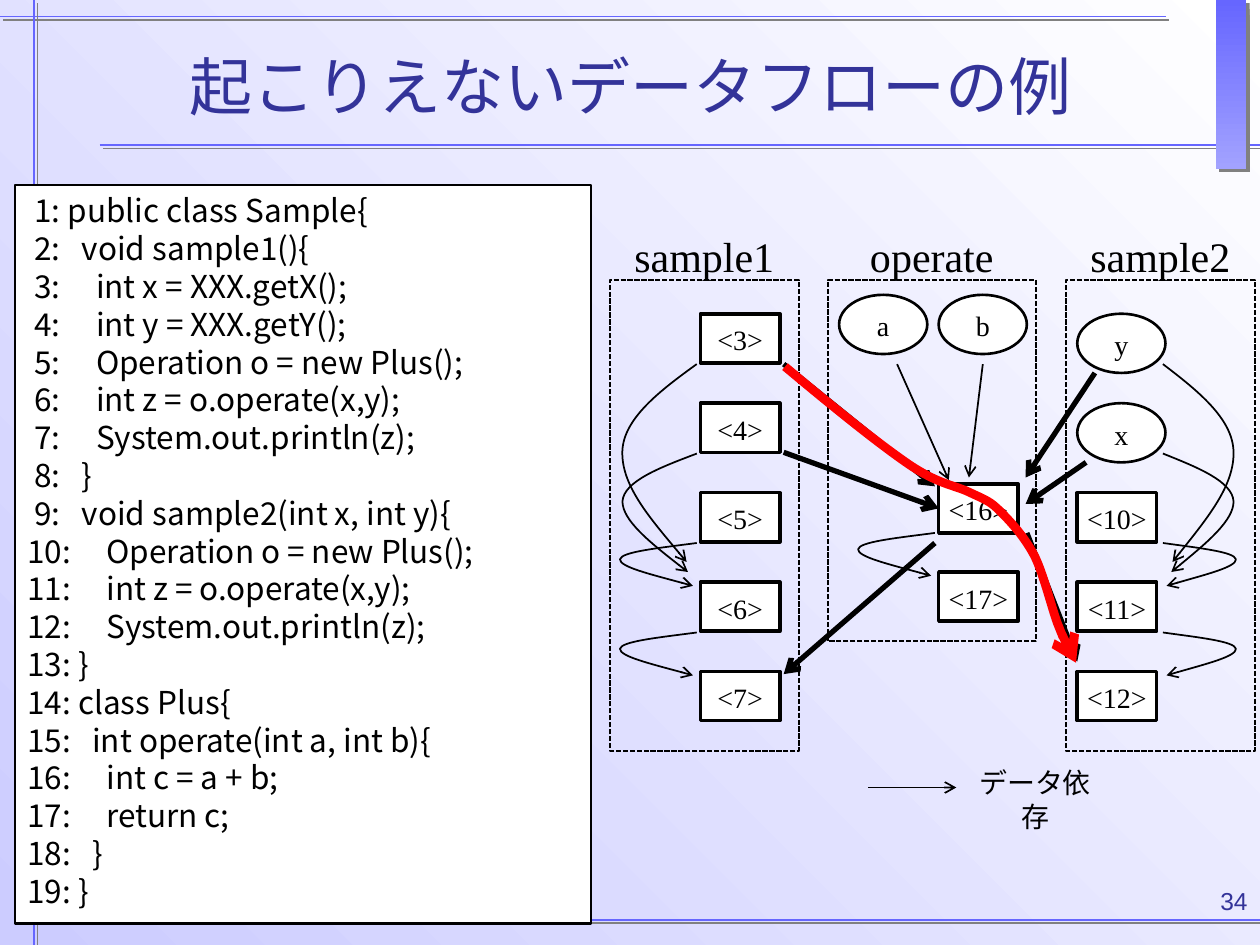
from lxml import etree
from pptx import Presentation
from pptx.dml.color import RGBColor
from pptx.enum import dml, shapes, text
from pptx.oxml.ns import qn
from pptx.util import Inches, Pt

NAVY = RGBColor(0x33, 0x33, 0x99)
BLUE = RGBColor(0x66, 0x66, 0xFF)
SOFT_BLUE = RGBColor(0xA2, 0xA2, 0xFF)
LAVENDER = RGBColor(0xCC, 0xCC, 0xFF)
GRAY = RGBColor(0x80, 0x80, 0x80)
WHITE = RGBColor(0xFF, 0xFF, 0xFF)
BLACK = RGBColor(0, 0, 0)
RED = RGBColor(0xFF, 0, 0)

SERIF = "Times New Roman"
RECT, OVAL = shapes.MSO_SHAPE.RECTANGLE, shapes.MSO_SHAPE.OVAL
CENTER, LEFT, RIGHT = text.PP_ALIGN.CENTER, text.PP_ALIGN.LEFT, text.PP_ALIGN.RIGHT
ROW_PITCH = 0.71

# Data flow curves as offsets from their start: one point, then Bezier triples
SHORT_FLOW = [(0, 0), (-0.3, 0.04), (-0.6, 0.07), (-0.61, 0.13),
              (-0.61, 0.19), (-0.32, 0.26), (-0.03, 0.34)]
MIDDLE_FLOW = [(0, 0), (-0.29, 0.11), (-0.58, 0.22), (-0.59, 0.38),
               (-0.59, 0.53), (-0.33, 0.74), (-0.07, 0.94)]
LONG_FLOW = [(0, 0), (-0.29, 0.21), (-0.58, 0.43), (-0.59, 0.69),
             (-0.6, 0.96), (-0.34, 1.26), (-0.08, 1.57)]
IMPOSSIBLE_FLOW = [
    (6.23, 2.91), (6.6, 3.22), (6.97, 3.52), (7.22, 3.69), (7.46, 3.85),
    (7.58, 3.85), (7.7, 3.91), (7.83, 3.97), (7.86, 3.98), (7.94, 4.06),
    (8.03, 4.15), (8.13, 4.26), (8.21, 4.41), (8.28, 4.55), (8.34, 4.8),
    (8.39, 4.94), (8.45, 5.09), (8.49, 5.18), (8.54, 5.26)]

CODE = """ 1: public class Sample{
 2:   void sample1(){
 3:     int x = XXX.getX();
 4:     int y = XXX.getY();
 5:     Operation o = new Plus();
 6:     int z = o.operate(x,y);
 7:     System.out.println(z);
 8:   }
 9:   void sample2(int x, int y){
10:     Operation o = new Plus();
11:     int z = o.operate(x,y);
12:     System.out.println(z);
13: }
14: class Plus{
15:   int operate(int a, int b){
16:     int c = a + b;
17:     return c;
18:   }
19: }"""


def set_format(target, values):
    for name, value in values.items():
        setattr(target, name, value)


def set_effects(part, shadow=False):
    effects = etree.SubElement(part._element.spPr, qn("a:effectLst"))
    if shadow:
        outer = etree.SubElement(effects, qn("a:outerShdw"), dist=str(Pt(2.8)),
                                 dir="2700000", algn="ctr", rotWithShape="0")
        etree.SubElement(outer, qn("a:srgbClr"), val=str(GRAY))


def set_line(part, color, width, dash=None, arrow=False):
    part.line.color.rgb = color
    part.line.width = Pt(width)
    if dash:
        part.line.dash_style = dash
    if arrow:
        etree.SubElement(part.line._get_or_add_ln(), qn("a:tailEnd"), type="arrow")


def set_gradient(fill, colors, angle):
    fill.gradient()
    fill.gradient_angle = angle
    for stop, color, position in zip(fill.gradient_stops, colors, (0, 1)):
        set_format(stop, {"position": position})
        stop.color.rgb = color


def write(frame, words, size, font=SERIF, color=BLACK, align=CENTER, **frame_values):
    frame.text = words
    set_format(frame, {"word_wrap": True, **frame_values})
    for paragraph in frame.paragraphs:
        paragraph.alignment = align
        set_format(paragraph.font, {"size": Pt(size), "name": font})
        paragraph.font.color.rgb = color


def add_label(slide, box, words, size, **style):
    label = slide.shapes.add_textbox(*map(Inches, box))
    write(label.text_frame, words, size, **style)


def add_box(slide, box, width, kind=RECT, fill=WHITE, dash=None):
    part = slide.shapes.add_shape(kind, *map(Inches, box))
    if fill is None:
        part.fill.background()
    else:
        part.fill.solid()
        part.fill.fore_color.rgb = fill
    set_line(part, BLACK, width, dash)
    set_effects(part)
    return part


def add_node(slide, x, y, words):
    """A statement such as <3> is a rectangle, a parameter is an ellipse."""
    if words.startswith("<"):
        node = add_box(slide, (x, y, 0.63, 0.39), 2)
    else:
        node = add_box(slide, (x, y, 0.7, 0.47), 1.5, OVAL)
    write(node.text_frame, words, 16, vertical_anchor=text.MSO_ANCHOR.MIDDLE,
          margin_left=0, margin_right=0, margin_top=Inches(0.02), margin_bottom=0)
    return node


def add_straight(slide, start, end, color=BLACK, width=1, arrow=True, shadow=False):
    line = slide.shapes.add_connector(shapes.MSO_CONNECTOR.STRAIGHT,
                                      *map(Inches, (*start, *end)))
    set_line(line, color, width, arrow=arrow)
    set_effects(line, shadow)
    return line


def add_curve(slide, points, x=0, y=0, stretch=1, color=BLACK, width=1):
    placed = [(Inches(x + dx * stretch), Inches(y + dy)) for dx, dy in points]
    builder = slide.shapes.build_freeform(*placed[0])
    builder.add_line_segments(placed[1:], close=False)
    curve = builder.convert_to_shape()
    # Turn each three line segments into one Bezier segment
    segments = list(curve._element.iter(qn("a:lnTo")))
    outline = segments[0].getparent()
    for first in range(0, len(segments), 3):
        bezier = etree.SubElement(outline, qn("a:cubicBezTo"))
        for segment in segments[first:first + 3]:
            bezier.append(segment[0])
            outline.remove(segment)
    curve.fill.background()
    set_line(curve, color, width, arrow=True)
    set_effects(curve)


def add_decoration(slide, width, height):
    set_gradient(slide.background.fill, (LAVENDER, WHITE), 45)
    for start, end in (((0, 0.13), (9.25, 0.13)), ((0.79, 1.15), (10.04, 1.15)),
                       ((0.75, 7.3), (width, 7.3)), ((0.27, 0), (0.27, height))):
        add_straight(slide, start, end, BLUE, arrow=False, shadow=True)
    ribbon = slide.shapes.add_shape(RECT, *map(Inches, (9.65, 0, 0.24, 1.34)))
    set_gradient(ribbon.fill, (BLUE, SOFT_BLUE), 270)
    ribbon.line.fill.background()
    set_effects(ribbon, shadow=True)


def add_title(slide, box):
    title = slide.shapes.title
    set_format(title, dict(zip(("left", "top", "width", "height"), map(Inches, box))))
    write(title.text_frame, "起こりえないデータフローの例", 36, "Arial", NAVY,
          vertical_anchor=text.MSO_ANCHOR.MIDDLE)


def add_code(slide, box):
    panel = add_box(slide, box, 1.5)
    write(panel.text_frame, CODE, 18, "Noto Sans CJK JP", align=LEFT,
          vertical_anchor=text.MSO_ANCHOR.TOP)
    for code_line in panel.text_frame.paragraphs:
        code_line.line_spacing = Pt(21.6)


def add_method(slide, box, name):
    left, top, width, _ = box
    add_box(slide, box, 1, fill=None, dash=dml.MSO_LINE.SQUARE_DOT)
    add_label(slide, (left, top - 0.44, width, 0.5), name, 24)


def add_sample(slide, box, name, nodes, node_x, flow_x, stretch):
    add_method(slide, box, name)
    left, top = box[:2]
    rows = [top + 0.27 + row * ROW_PITCH for row in range(len(nodes))]
    for y, words in zip(rows, nodes):
        add_node(slide, left + node_x, y, words)
    for y, flow in zip(rows, (LONG_FLOW, MIDDLE_FLOW, SHORT_FLOW, SHORT_FLOW)):
        add_curve(slide, flow, left + flow_x, y + 0.4, stretch)


def add_operate(slide, box):
    add_method(slide, box, "operate")
    left, top = box[:2]
    for x, y, words in ((0.09, 0.12, "a"), (0.88, 0.12, "b"), (0.88, 2.32, "<17>")):
        add_node(slide, left + x, top + y, words)
    add_curve(slide, SHORT_FLOW, left + 0.85, top + 2.01)
    for start, end in (((0.55, 0.67), (0.96, 1.59)), ((1.23, 0.67), (1.12, 1.57))):
        add_straight(slide, (left + start[0], top + start[1]),
                     (left + end[0], top + end[1]))
    return add_node(slide, left + 0.88, top + 1.62, "<16>")


def add_calls(slide, addition):
    # Flows between the methods, the first one ending at the side of <16>
    into_addition = add_straight(slide, (6.22, 3.59), (7.42, 4.04), width=3)
    into_addition.end_connect(addition, 1)
    for start, end in (((6.22, 2.89), (7.42, 3.86)), ((7.42, 4.31), (6.22, 5.35)),
                       ((8.69, 2.96), (8.14, 3.79)), ((8.62, 3.67), (8.14, 4)),
                       ((8.15, 4.23), (8.55, 5.25))):
        add_straight(slide, start, end, width=3)
    add_curve(slide, IMPOSSIBLE_FLOW, color=RED, width=5)


def add_legend(slide, box):
    left, top, width, height = box
    add_straight(slide, (left, top + 0.22), (left + 0.7, top + 0.22))
    add_label(slide, (left + 0.7, top, width - 0.7, height), "データ依存", 16)


def main():
    deck = Presentation()
    set_format(deck, {"slide_width": Inches(10), "slide_height": Inches(7.5)})
    slide = deck.slides.add_slide(deck.slide_layouts[5])
    add_decoration(slide, 10, 7.5)
    add_title(slide, (0.5, 0.05, 9, 1.25))
    add_code(slide, (0.12, 1.47, 4.57, 5.86))
    add_sample(slide, (4.84, 2.22, 1.5, 3.74), "sample1",
               ("<3>", "<4>", "<5>", "<6>", "<7>"), 0.72, 0.69, 1)
    add_sample(slide, (8.46, 2.22, 1.5, 3.74), "sample2",
               ("y", "x", "<10>", "<11>", "<12>"), 0.09, 0.77, -0.95)
    addition = add_operate(slide, (6.57, 2.22, 1.65, 2.87))
    add_calls(slide, addition)
    add_legend(slide, (6.89, 6.03, 1.95, 0.37))
    add_label(slide, (7.67, 6.98, 2.33, 0.52), "34", 14, font="Arial", color=NAVY,
              align=RIGHT)
    deck.save("out.pptx")


if __name__ == "__main__":
    main()
